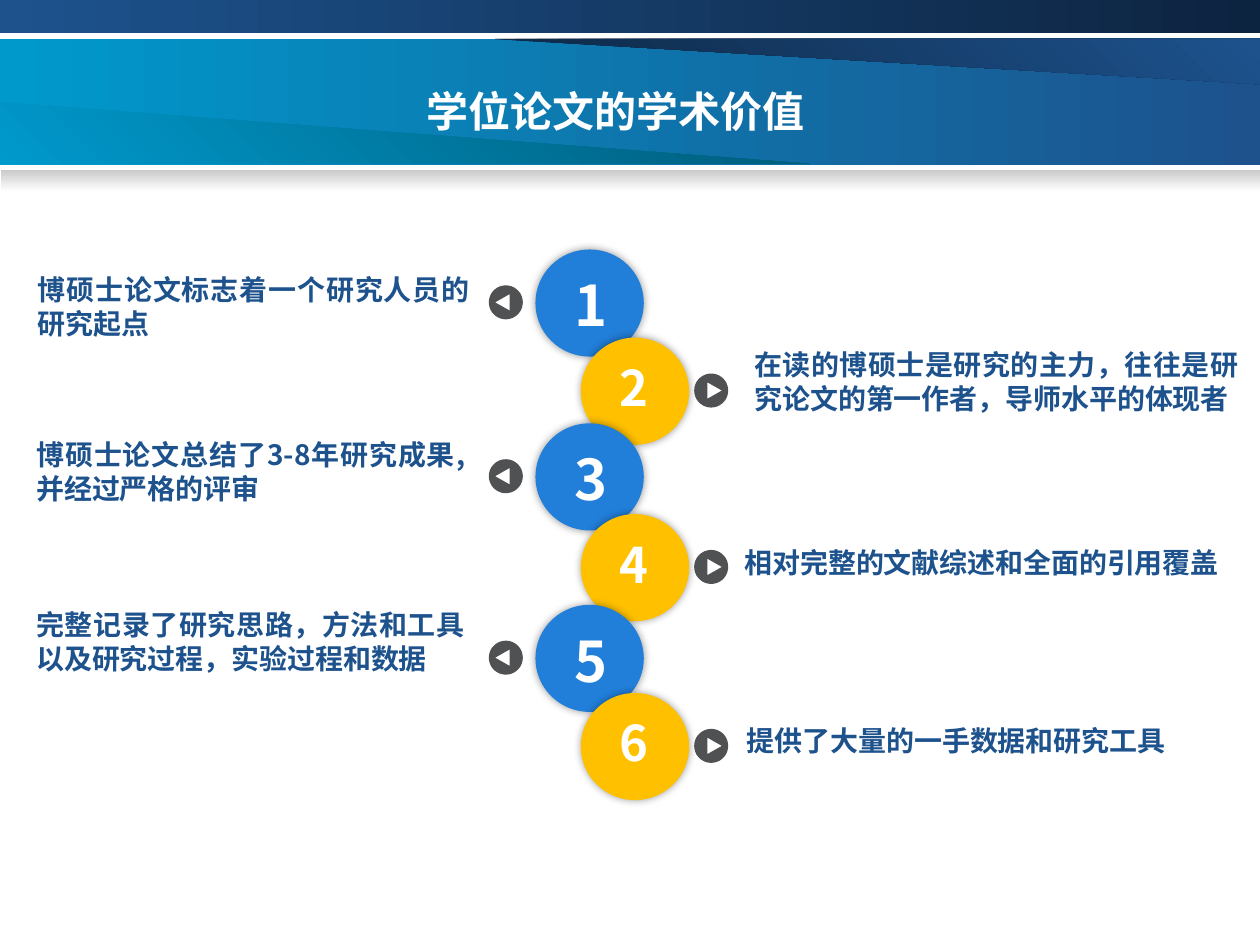
import math

from lxml import etree
from pptx import Presentation
from pptx.dml.color import RGBColor
from pptx.enum import shapes, text
from pptx.oxml.ns import qn
from pptx.util import Inches, Pt

CJK = "Noto Sans CJK SC"
NAVY, CYAN = "1D528D", "0099CC"
UNITS = 1000  # freeform units per inch


def paint(sp, *colours, angle=0):
    """Fill with one colour, or a gradient of two at a clockwise angle; no line or shadow."""
    sp.shadow.inherit = False
    sp.line.fill.background()
    if len(colours) == 1:
        sp.fill.solid()
        sp.fill.fore_color.rgb = RGBColor.from_string(colours[0])
        return
    sp.fill.gradient()
    sp.fill.gradient_angle = (360 - angle) % 360
    for stop, colour, position in zip(sp.fill.gradient_stops, colours, (0, 1)):
        stop.color.rgb = RGBColor.from_string(colour)
        stop.position = position


def add_text(words, box, size, colour, align, font=CJK, spacing=None):
    sp = s.shapes.add_textbox(*map(Inches, box))
    tf = sp.text_frame
    tf.word_wrap = True
    tf.text = words
    p = tf.paragraphs[0]
    p.alignment = align
    p._p.get_or_add_pPr().set("hangingPunct", "0")
    if spacing:
        p.line_spacing = Pt(spacing)
    r = p.runs[0]
    r.font.size, r.font.bold, r.font.name = Pt(size), True, font
    r.font.color.rgb = RGBColor.from_string(colour)
    etree.SubElement(r.font._element, qn("a:ea"), typeface=font)
    return tf


prs = Presentation()
prs.slide_width, prs.slide_height = Inches(10), Inches(7.5)
s = prs.slides.add_slide(prs.slide_layouts[6])

# Header
wedges = [
    ([(3.93, 0.31), (10, 0.67), (10, 0.31)], ("0E2744", NAVY)),
    ([(0, 0.81), (0, 1.3), (6.43, 1.3)], (CYAN, "005A78")),
]
bars = [
    ((0, 0.31, 10, 1), (CYAN, NAVY), 0),
    ((0, 0, 10, 0.26), (NAVY, "0D2440"), 0),
    ((0.01, 1.35, 9.99, 0.17), ("CACACA", "FFFFFF"), 90),
]
for box, colours, angle in bars:
    sp = s.shapes.add_shape(shapes.MSO_SHAPE.RECTANGLE, *map(Inches, box))
    paint(sp, *colours, angle=angle)
for points, colours in wedges:
    points = [(x * UNITS, y * UNITS) for x, y in points]
    fb = s.shapes.build_freeform(*points[0], scale=Inches(1) / UNITS)
    fb.add_line_segments(points[1:])
    paint(fb.convert_to_shape(), *colours, angle=315)
add_text("学位论文的学术价值", (2.87, 0.63, 3.61, 0.8), 24, "FFFFFF",
         text.PP_ALIGN.RIGHT, font="DejaVu Sans")

# Circle top, then text and its left, top, width, height
rows = [
    (1.98, "博硕士论文标志着一个研究人员的研究起点", (0.2, 2.11, 3.63, 0.64)),
    (2.68, "在读的博硕士是研究的主力，往往是研究论文的第一作者，导师水平的体现者",
     (5.89, 2.71, 4.04, 0.64)),
    (3.36, "博硕士论文总结了3-8年研究成果,并经过严格的评审", (0.19, 3.42, 3.6, 0.64)),
    (4.08, "相对完整的文献综述和全面的引用覆盖", (5.81, 4.28, 4.08, 0.37)),
    (4.8, "完整记录了研究思路，方法和工具以及研究过程，实验过程和数据",
     (0.19, 4.77, 3.6, 0.64)),
    (5.5, "提供了大量的一手数据和研究工具", (5.83, 5.69, 4.1, 0.37)),
]
sides = [  # circle left, number left, number drop, number size, arrow centre, direction, colour
    (4.25, 4.28, 0.12, 32, 4.015, -1, "217ED9"),
    (4.61, 4.62, 0.11, 28, 5.645, 1, "FFC000"),
]
RADIUS = 0.135
for i, (top, words, box) in enumerate(rows):
    left, number_left, drop, size, cx, way, colour = sides[i % 2]
    tf = add_text(words, box, 16, NAVY, text.PP_ALIGN.JUSTIFY, spacing=19.4)
    tf.auto_size = text.MSO_AUTO_SIZE.SHAPE_TO_FIT_TEXT

    # Round arrow badge with a triangular hole
    cy = top + 0.42
    turns = [math.radians(a) for a in range(0, 360, 10)]
    ring = [(cx + RADIUS * math.cos(t), cy + RADIUS * math.sin(t)) for t in turns]
    hole = [(cx + way * 0.085, cy), (cx - way * 0.03, cy + 0.065), (cx - way * 0.03, cy - 0.065)]
    ring, hole = [[(x * UNITS, y * UNITS) for x, y in part] for part in (ring, hole)]
    fb = s.shapes.build_freeform(*ring[0], scale=Inches(1) / UNITS)
    fb.add_line_segments(ring[1:])
    fb.move_to(*hole[0])
    fb.add_line_segments(hole[1:])
    paint(fb.convert_to_shape(), "505153")

    sp = s.shapes.add_shape(shapes.MSO_SHAPE.OVAL, *map(Inches, (left, top, 0.86, 0.85)))
    paint(sp, colour)
    effects = sp._element.spPr.find(qn("a:effectLst"))
    shadow = etree.SubElement(effects, qn("a:outerShdw"), blurRad=str(Pt(5)), dist="0",
                              dir="0", algn="ctr", rotWithShape="0")
    black = etree.SubElement(shadow, qn("a:srgbClr"), val="000000")
    etree.SubElement(black, qn("a:alpha"), val="40000")

    add_text(str(i + 1), (number_left, top + drop, 0.83, 0.64), size, "FFFFFF",
             text.PP_ALIGN.CENTER, spacing=size * 1.2)

prs.save("out.pptx")
